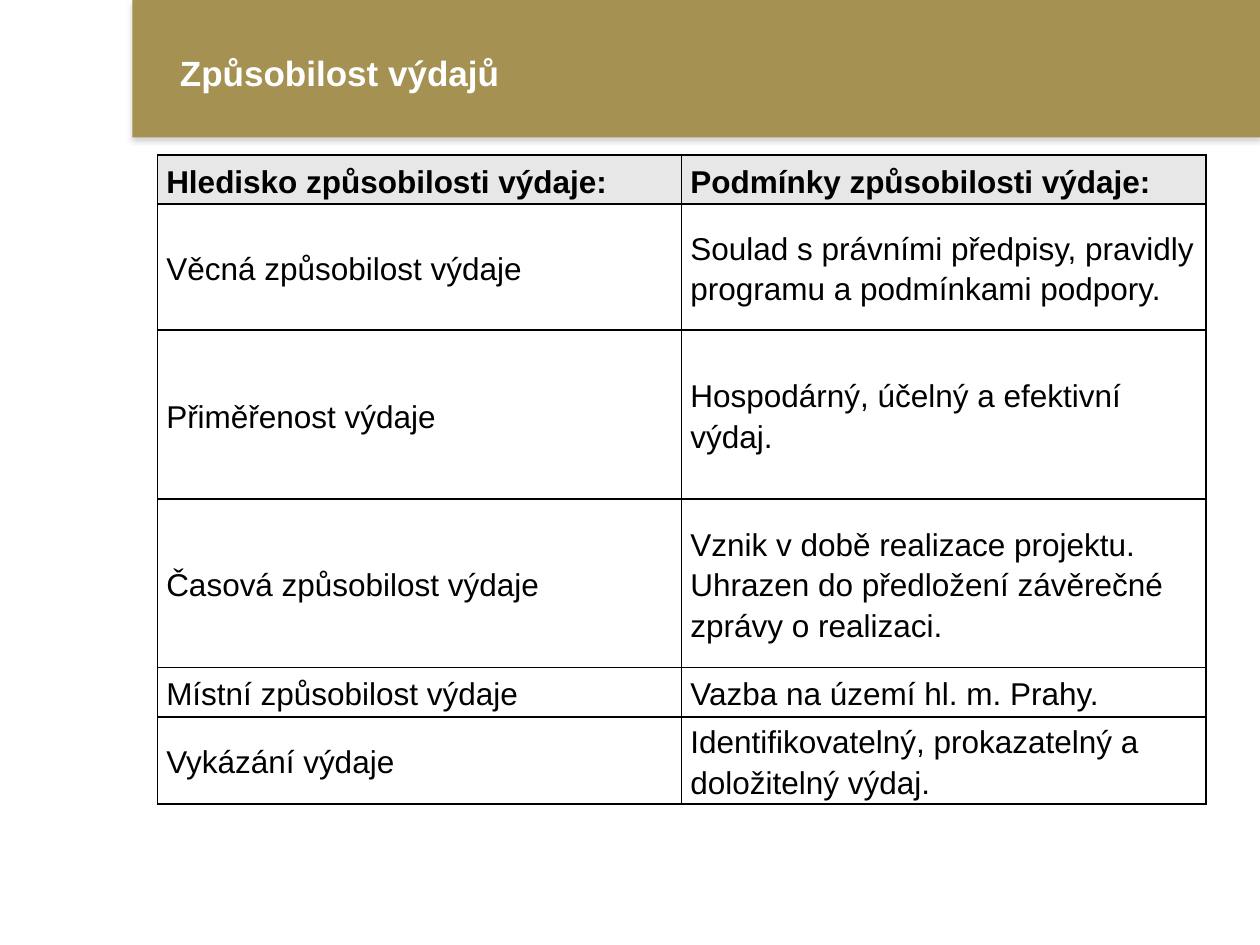
from lxml import etree
from pptx import Presentation
from pptx.dml.color import RGBColor
from pptx.enum.shapes import MSO_SHAPE
from pptx.enum.text import MSO_ANCHOR
from pptx.oxml import parse_xml
from pptx.oxml.ns import nsdecls, qn
from pptx.util import Inches, Pt

RECT = MSO_SHAPE.RECTANGLE
MIDDLE = MSO_ANCHOR.MIDDLE
FONT = "Arial"
COLORS = {"band": "A59253", "head": "E7E7E7", "body": "FFFFFF",
          "text": "000000", "title": "FFFFFF", "line": "000000",
          "shadow": "808080"}

TITLE = "Způsobilost výdajů"
ROWS = [
    (0.39, "Hledisko způsobilosti výdaje:", "Podmínky způsobilosti výdaje:"),
    (1, "Věcná způsobilost výdaje",
     "Soulad s právními předpisy, pravidly programu a podmínkami podpory."),
    (1.34, "Přiměřenost výdaje", "Hospodárný, účelný a efektivní výdaj."),
    (1.34, "Časová způsobilost výdaje",
     "Vznik v době realizace projektu. "
     "Uhrazen do předložení závěrečné zprávy o realizaci."),
    (0.39, "Místní způsobilost výdaje", "Vazba na území hl. m. Prahy."),
    (0.67, "Vykázání výdaje",
     "Identifikovatelný, prokazatelný a doložitelný výdaj."),
]
COL = 4.16


def color(name):
    return RGBColor.from_string(COLORS[name])


def style(frame, size, name, bold):
    font = frame.paragraphs[0].runs[0].font
    font.name, font.size, font.bold = FONT, Pt(size), bold
    font.color.rgb = color(name)


def add_band(slide):
    band = slide.shapes.add_shape(
        RECT, Inches(1.05), 0, Inches(8.95), Inches(1.09))
    band.fill.solid()
    band.fill.fore_color.rgb = color("band")
    band.line.fill.background()
    band.shadow.inherit = False
    effects = band._element.spPr.find(qn("a:effectLst"))
    effects.append(parse_xml(
        f'<a:outerShdw {nsdecls("a")} blurRad="{Pt(3.1)}" dist="{Pt(1.8)}" '
        f'dir="5400000" rotWithShape="0"><a:srgbClr val="{COLORS["shadow"]}">'
        '<a:alpha val="35000"/></a:srgbClr></a:outerShdw>'))


def add_title(slide):
    box = slide.shapes.add_textbox(
        Inches(1.33), Inches(0.4), Inches(8.17), Inches(0.35))
    frame = box.text_frame
    frame.word_wrap = True
    frame.vertical_anchor = MIDDLE
    frame.text = TITLE
    style(frame, 20, "title", True)


def add_lines(cell):
    props = cell._tc.get_or_add_tcPr()
    for side in ("lnL", "lnR", "lnT", "lnB"):
        line = etree.SubElement(props, qn(f"a:{side}"), w=str(Pt(1)))
        fill = etree.SubElement(line, qn("a:solidFill"))
        etree.SubElement(fill, qn("a:srgbClr"), val=COLORS["line"])


def fill_cell(cell, text, head):
    add_lines(cell)
    cell.fill.solid()
    cell.fill.fore_color.rgb = color("head" if head else "body")
    cell.margin_left = cell.margin_right = Inches(0.07)
    cell.margin_top = cell.margin_bottom = 0
    cell.vertical_anchor = MIDDLE
    cell.text_frame.text = text
    cell.text_frame.paragraphs[0].line_spacing = 1.15
    style(cell.text_frame, 18, "text", head)


def add_grid(slide):
    total = sum(row[0] for row in ROWS)
    table = slide.shapes.add_table(
        len(ROWS), 2, Inches(1.25), Inches(1.23),
        Inches(2 * COL), Inches(total)).table
    table.horz_banding = False
    for col in table.columns:
        col.width = Inches(COL)
    for r, (height, *texts) in enumerate(ROWS):
        table.rows[r].height = Inches(height)
        for c, text in enumerate(texts):
            fill_cell(table.cell(r, c), text, r == 0)


def main():
    deck = Presentation()
    deck.slide_width, deck.slide_height = Inches(10), Inches(7.5)
    slide = deck.slides.add_slide(deck.slide_layouts[6])
    add_band(slide)
    add_title(slide)
    add_grid(slide)
    deck.save("out.pptx")


if __name__ == "__main__":
    main()
